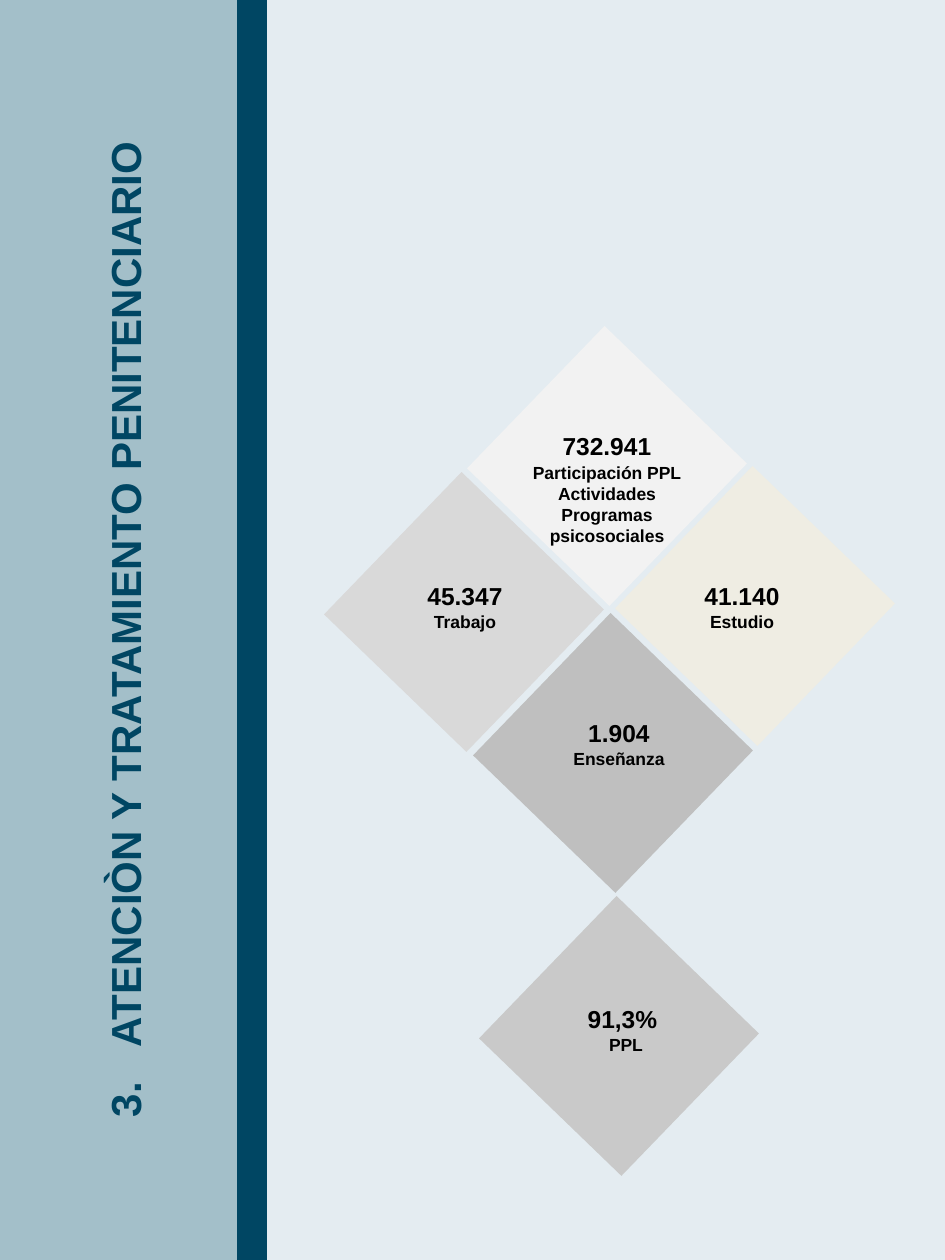
import pptx
import pptx.util
import pptx.dml.color
import pptx.enum.shapes
import pptx.enum.text

EMU_PER_PX = 914400 // 126
SLIDE_WIDTH, SLIDE_HEIGHT = 945, 1260
DIAMOND_SIDE = 198
DIAMOND_ANGLE = 44
LABEL_WIDTH, LABEL_HEIGHT = 174, 74

COLORS = {
    "background": "E4ECF1",
    "band": "A3BFC9",
    "navy": "004663",
    "black": "000000",
    "white_gray": "F2F2F2",
    "cream": "EFEDE3",
    "light_gray": "D9D9D9",
    "gray": "BFBFBF",
    "mid_gray": "C9C9C9",
}


def px(length):
    return pptx.util.Emu(length * EMU_PER_PX)


def color(name):
    return pptx.dml.color.RGBColor.from_string(COLORS[name])


class SlideBuilder:
    def __init__(self, slide):
        self.slide = slide
        self.font = "Arial"
        self.figure_size = 14
        self.caption_size = 10

    def background(self, fill):
        self.slide.background.fill.solid()
        self.slide.background.fill.fore_color.rgb = color(fill)

    def rectangle(self, left, top, width, height, fill, angle=0):
        shape = self.slide.shapes.add_shape(
            pptx.enum.shapes.MSO_SHAPE.RECTANGLE,
            px(left), px(top), px(width), px(height))
        shape.shadow.inherit = False
        shape.fill.solid()
        shape.fill.fore_color.rgb = color(fill)
        shape.line.fill.background()
        shape.rotation = angle

    def diamond(self, left, top, fill):
        self.rectangle(left, top, DIAMOND_SIDE, DIAMOND_SIDE, fill, DIAMOND_ANGLE)

    def text_box(self, left, top, width, height):
        shape = self.slide.shapes.add_textbox(px(left), px(top), px(width), px(height))
        shape.text_frame.word_wrap = True
        return shape.text_frame

    def run(self, paragraph, text, size, fill="black", font=None, bold=True):
        paragraph.alignment = pptx.enum.text.PP_ALIGN.CENTER
        run = paragraph.add_run()
        run.text = text
        run.font.name = font or self.font
        run.font.size = pptx.util.Pt(size)
        run.font.bold = bold
        run.font.color.rgb = color(fill)
        return run

    def vertical_title(self, left, top, width, height, number, title):
        text_frame = self.text_box(left, top, width, height)
        text_frame._txBody.bodyPr.set("vert", "vert270")
        paragraph = text_frame.paragraphs[0]
        self.run(paragraph, number, 24, "navy")
        gap = self.run(paragraph, " ", 24, "navy")
        gap.font._element.set("spc", "1330")
        self.run(paragraph, title, 24, "navy")

    def label(self, left, top, figure, caption, lead=None):
        text_frame = self.text_box(left, top, LABEL_WIDTH, LABEL_HEIGHT)
        first = text_frame.paragraphs[0]
        self.run(first, figure, self.figure_size)
        if lead:
            self.run(first, " ", 18, font="Cabin", bold=False)
            self.run(first, lead, self.caption_size)
        self.run(text_frame.add_paragraph(), caption, self.caption_size)


def main():
    presentation = pptx.Presentation()
    presentation.slide_width = px(SLIDE_WIDTH)
    presentation.slide_height = px(SLIDE_HEIGHT)
    builder = SlideBuilder(presentation.slides.add_slide(presentation.slide_layouts[6]))

    builder.background("background")
    builder.rectangle(0, 0, 237, SLIDE_HEIGHT, "band")
    builder.rectangle(237, 0, 30, SLIDE_HEIGHT, "navy")
    builder.vertical_title(93, 113, 77, 1033, "3.", "ATENCIÒN Y TRATAMIENTO PENITENCIARIO")

    for left, top, fill in [
        (508, 367, "white_gray"),
        (656, 507, "cream"),
        (365, 513, "light_gray"),
        (514, 654, "gray"),
        (520, 937, "mid_gray"),
    ]:
        builder.diamond(left, top, fill)

    builder.label(520, 418, "732.941", "Actividades Programas psicosociales", "Participación PPL")
    for left, top, figure, caption in [
        (378, 575, "45.347", "Trabajo"),
        (655, 575, "41.140", "Estudio"),
        (532, 712, "1.904", "Enseñanza"),
        (539, 998, "91,3% ", "PPL"),
    ]:
        builder.label(left, top, figure, caption)

    presentation.save("out.pptx")


if __name__ == "__main__":
    main()
